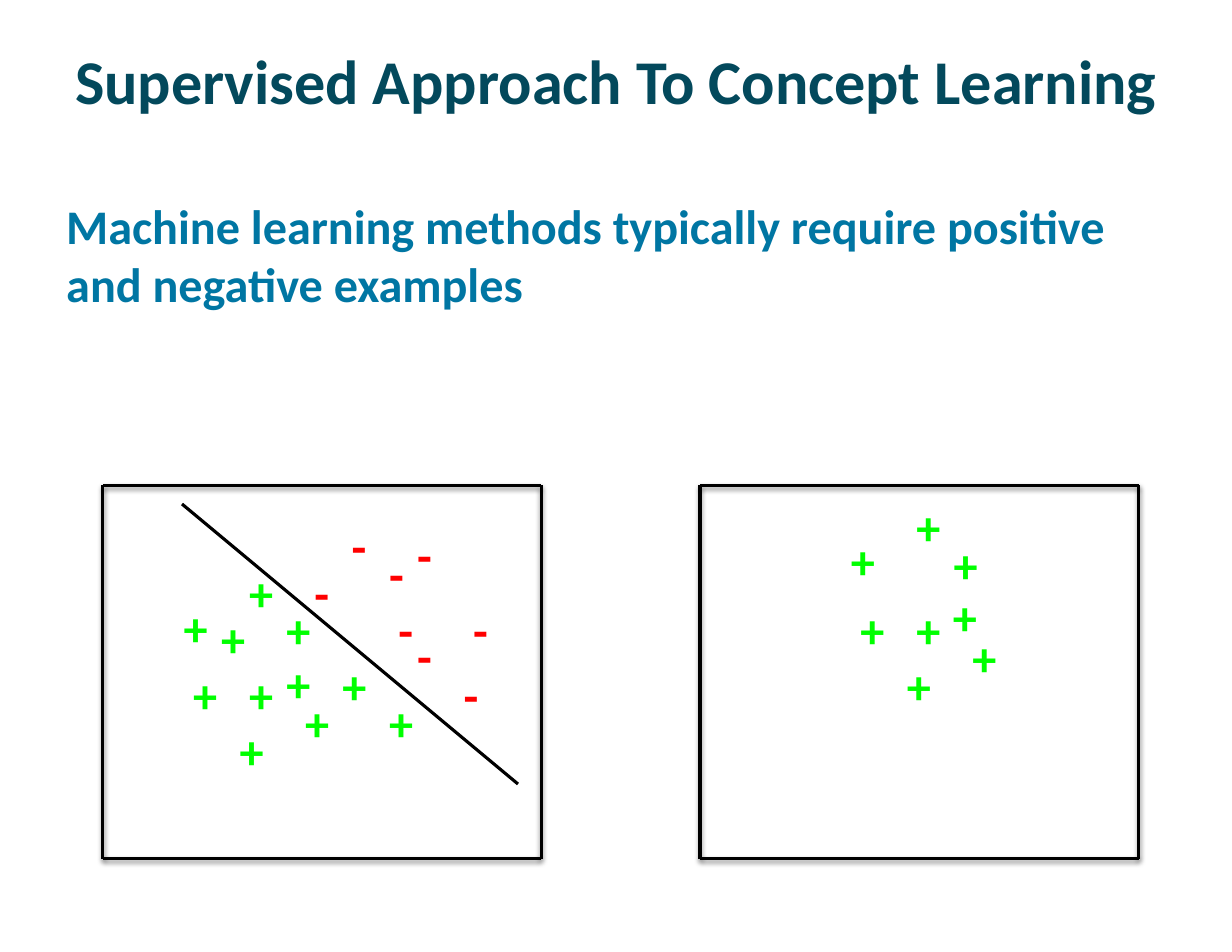
from dataclasses import dataclass
from lxml.etree import SubElement as Sub
from pptx import Presentation
from pptx.dml.color import RGBColor as RGB
from pptx.enum.shapes import MSO_CONNECTOR as Link
from pptx.enum.text import MSO_ANCHOR as Anchor, MSO_AUTO_SIZE as Fit, PP_ALIGN as Align
from pptx.oxml.ns import qn
from pptx.util import Pt


@dataclass(frozen=True)
class Theme:
    face: str = "Calibri"
    title: str = "03495C"
    body: str = "0076A3"
    plus: str = "00FF00"
    minus: str = "FF0000"
    ink: str = "000000"
    large: int = 40
    text: int = 31


theme = Theme()


def write(shape, text, size, color):
    frame = shape.text_frame
    frame.text = text
    para = frame.paragraphs[0]
    font = para.font
    font.name, font.size, font.bold = theme.face, Pt(size), True
    font.color.rgb = RGB.from_string(color)
    return frame, para


def draw(x1, y1, x2, y2, shade):
    line = slide.shapes.add_connector(Link.STRAIGHT, Pt(x1), Pt(y1), Pt(x2), Pt(y2))
    line.line.color.rgb = RGB.from_string(theme.ink)
    line.line.width = Pt(2)
    effect = Sub(line._element.spPr, qn("a:effectLst"))
    if shade:
        outer = Sub(effect, qn("a:outerShdw"), blurRad=str(Pt(3.1)), dist=str(Pt(1.6)),
                    dir="5400000", rotWithShape="0")
        tint = Sub(outer, qn("a:srgbClr"), val=theme.ink)
        Sub(tint, qn("a:alpha"), val="38000")


deck = Presentation()
deck.slide_width, deck.slide_height = Pt(792), Pt(612)
slide = deck.slides.add_slide(deck.slide_layouts[1])

title = slide.shapes.title
body = slide.placeholders[1]
title.left, title.top, title.width, title.height = Pt(39.6), Pt(13.7), Pt(712.8), Pt(74.9)
body.left, body.top, body.width, body.height = Pt(26.6), Pt(122.4), Pt(725.8), Pt(465.8)

head, para = write(title, "Supervised Approach To Concept Learning", theme.large, theme.title)
head.vertical_anchor = Anchor.MIDDLE
para.alignment = Align.CENTER

note, para = write(body, "Machine learning methods typically require positive and negative examples",
                   theme.text, theme.body)
para.space_before = Pt(22.1)
props = para._p.get_or_add_pPr()
props.set("marL", str(Pt(8)))
props.set("indent", "0")
Sub(props, qn("a:buNone"))
props.insert(1, props.find(qn("a:buNone")))

for frame in (head, note):
    frame.auto_size = Fit.NONE
    frame.margin_left = frame.margin_right = Pt(8)
    frame.margin_top = frame.margin_bottom = Pt(4)

top, low, wide = 312, 552, 282
for left in (66, 450):
    right = left + wide
    draw(left, top, left, low, True)
    draw(right, low, left, low, True)
    draw(right, top, left, top, True)
    draw(right, top, right, low, True)
draw(333, 504, 117, 324, False)

mixed = [(153, 372), (111, 394.5), (135, 402), (147, 474), (117, 438), (213, 432),
         (153, 438), (189, 456), (177, 396), (243, 456), (177, 430.5)]
minus = [(291, 438), (297, 396), (219, 342), (243, 360), (249, 396), (261, 348),
         (195, 372), (261, 412.5)]
alone = [(582, 330), (540, 352), (576, 432), (546, 396), (582, 396), (618, 414),
         (606, 354), (605.5, 388)]

for sign, color, width, spots in (("+", theme.plus, 30, mixed), ("-", theme.minus, 24.5, minus),
                                  ("+", theme.plus, 30, alone)):
    for x, y in spots:
        box = slide.shapes.add_textbox(Pt(x), Pt(y), Pt(width), Pt(31.5))
        frame, para = write(box, sign, theme.text, color)
        frame.word_wrap = False
        frame.auto_size = Fit.SHAPE_TO_FIT_TEXT
        para.line_spacing = 0.58

deck.save("out.pptx")
